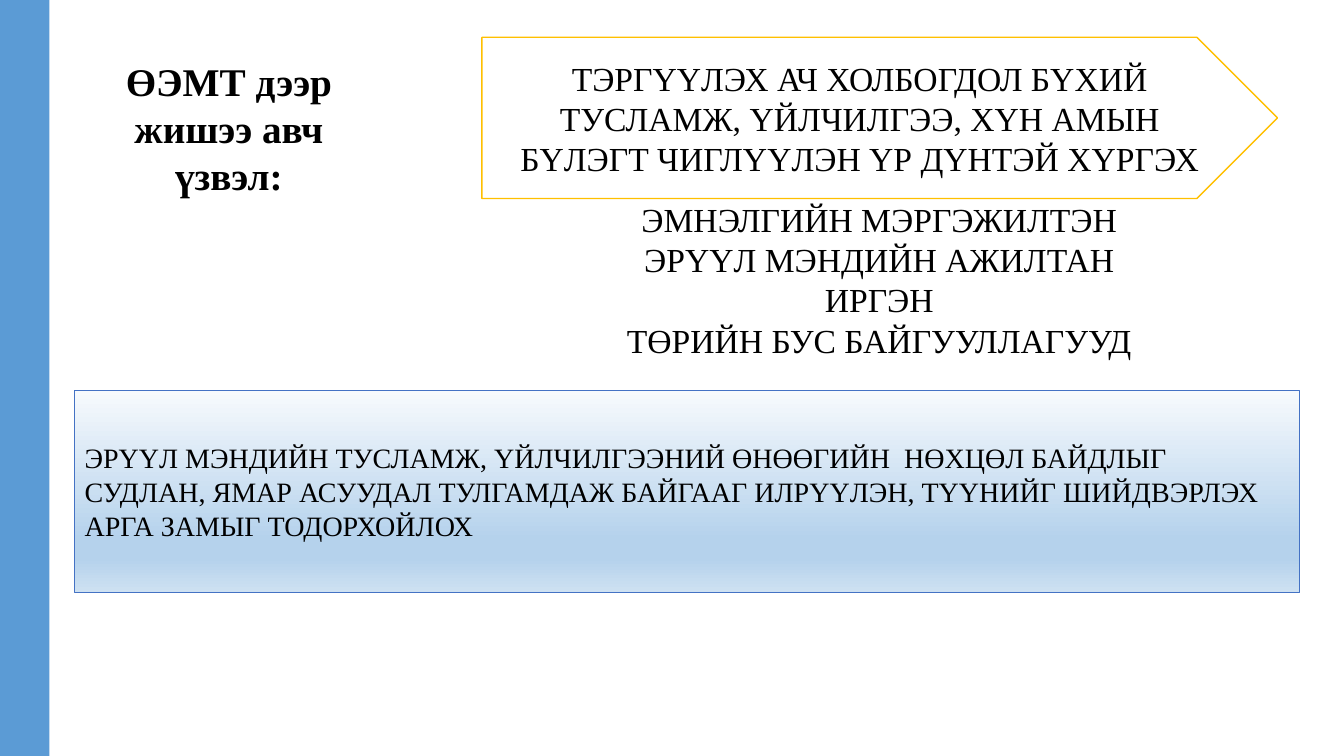
"""Build a slide on steering health care services toward priority groups."""
from lxml.etree import SubElement
from pptx import Presentation
from pptx.dml.color import RGBColor
from pptx.enum.shapes import MSO_SHAPE
from pptx.enum.text import MSO_ANCHOR, PP_ALIGN
from pptx.oxml.ns import qn
from pptx.util import Inches, Pt


def color(code):
    return RGBColor.from_string(code)


def write(frame, text, size=24, bold=False, align=PP_ALIGN.CENTER, anchor=MSO_ANCHOR.MIDDLE):
    frame.word_wrap = True
    frame.vertical_anchor = anchor
    for num, line in enumerate(text.split("\n")):
        para = frame.add_paragraph() if num else frame.paragraphs[0]
        para.alignment = align
        run = para.add_run()
        run.text = line
        font = run.font
        font.name, font.size, font.bold = "Times New Roman", Pt(size), bold
        font.color.rgb = color("000000")


class Deck:
    def __init__(self):
        self.show = Presentation()
        self.show.slide_width, self.show.slide_height = Inches(13.33), Inches(7.5)
        self.slide = self.show.slides.add_slide(self.show.slide_layouts[6])

    def shape(self, kind, box, fill=None, line=None, width=1):
        item = self.slide.shapes.add_shape(kind, *map(Inches, box))
        item.shadow.inherit = False
        if fill:
            item.fill.solid()
            item.fill.fore_color.rgb = color(fill)
        if line:
            item.line.color.rgb = color(line)
            item.line.width = Pt(width)
        else:
            item.line.fill.background()
        return item

    def blend(self, item, stops):
        item.fill.gradient()
        item.fill.gradient_angle = 270
        group = item._element.spPr.find(".//" + qn("a:gsLst"))
        for old in list(group):
            group.remove(old)
        for place, code in stops:
            stop = SubElement(group, qn("a:gs"), pos=str(place * 1000))
            SubElement(stop, qn("a:srgbClr"), val=code)

    def text(self, box, text, **form):
        item = self.slide.shapes.add_textbox(*map(Inches, box))
        write(item.text_frame, text, anchor=MSO_ANCHOR.TOP, **form)


def main():
    deck = Deck()
    arrow = deck.shape(MSO_SHAPE.PENTAGON, (4.78, 0.37, 7.89, 1.6), "FFFFFF", "FFC000")
    write(arrow.text_frame, "ТЭРГҮҮЛЭХ АЧ ХОЛБОГДОЛ БҮХИЙ ТУСЛАМЖ, ҮЙЛЧИЛГЭЭ, "
          "ХҮН АМЫН БҮЛЭГТ ЧИГЛҮҮЛЭН ҮР ДҮНТЭЙ ХҮРГЭХ")
    deck.text((0.66, 0.52, 3.22, 1.51), "ӨЭМТ дээр жишээ авч үзвэл:", size=28, bold=True)
    deck.text((4.61, 1.92, 8.22, 1.72), "ЭМНЭЛГИЙН МЭРГЭЖИЛТЭН\nЭРҮҮЛ МЭНДИЙН АЖИЛТАН\n"
              "ИРГЭН\nТӨРИЙН БУС БАЙГУУЛЛАГУУД")
    panel = deck.shape(MSO_SHAPE.RECTANGLE, (0.74, 3.87, 12.15, 2.01), line="4472C4", width=0.5)
    deck.blend(panel, [(0, "F7FAFD"), (74, "B5D2EC"), (83, "B5D2EC"), (100, "CEE1F2")])
    write(panel.text_frame, "ЭРҮҮЛ МЭНДИЙН ТУСЛАМЖ, ҮЙЛЧИЛГЭЭНИЙ ӨНӨӨГИЙН  НӨХЦӨЛ БАЙДЛЫГ "
          "СУДЛАН, ЯМАР АСУУДАЛ ТУЛГАМДАЖ БАЙГААГ ИЛРҮҮЛЭН, ТҮҮНИЙГ ШИЙДВЭРЛЭХ "
          "АРГА ЗАМЫГ ТОДОРХОЙЛОХ", size=20, align=PP_ALIGN.LEFT)
    deck.shape(MSO_SHAPE.RECTANGLE, (0, 0, 0.49, 7.5), "5B9BD5")
    deck.show.save("out.pptx")


if __name__ == "__main__":
    main()
